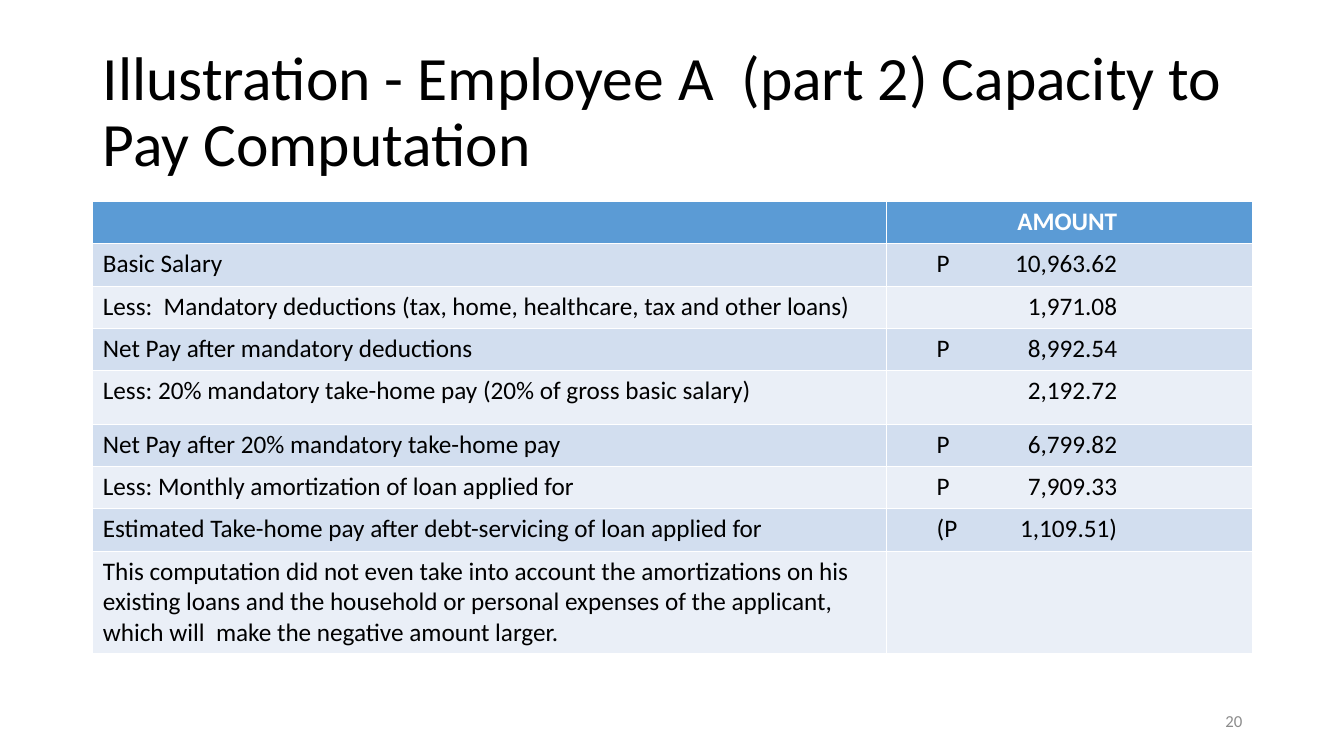
"""Build the slide on the capacity to pay of Employee A."""
from lxml.etree import SubElement
from pptx import Presentation
from pptx.dml.color import RGBColor as Color
from pptx.enum.text import MSO_ANCHOR as Anchor, PP_ALIGN as Align
from pptx.oxml.ns import qn
from pptx.util import Inches, Pt

TITLE = "Illustration - Employee A  (part 2) Capacity to Pay Computation"
NUMBER = "20"
ROWS = [
    ("", "", "AMOUNT"),
    ("Basic Salary", "P", "10,963.62"),
    ("Less:  Mandatory deductions (tax, home, healthcare, tax and other loans)", "", "1,971.08"),
    ("Net Pay after mandatory deductions", "P", "8,992.54"),
    ("Less: 20% mandatory take-home pay (20% of gross basic salary)", "", "2,192.72"),
    ("Net Pay after 20% mandatory take-home pay", "P", "6,799.82"),
    ("Less: Monthly amortization of loan applied for", "P", "7,909.33"),
    ("Estimated Take-home pay after debt-servicing of loan applied for", "(P", "1,109.51)"),
    ("This computation did not even take into account the amortizations on his "
     "existing loans and the household or personal expenses of the applicant, "
     "which will  make the negative amount larger.", "", ""),
]
WIDTHS = (7.87, 3.63)
HEIGHT = 0.42
TALL = {4: 0.53, 8: 1.02}
TABS = ((0.4, "l"), (2.19, "r"))

THEME = {
    "font": "Calibri",
    "title": 44, "body": 18, "foot": 12,
    "ink": "000000", "light": "FFFFFF", "gray": "8C8C8C",
    "head": "5B9BD5", "bands": ("EAEFF7", "D2DEEF"),
}


def write(frame, text, size="body", ink="ink", bold=False, align=Align.LEFT,
          space=None, tabs=()):
    para = frame.paragraphs[0]
    para.alignment = align
    if space:
        para.line_spacing = space
    if tabs:
        stops = SubElement(para._p.get_or_add_pPr(), qn("a:tabLst"))
        for pos, side in tabs:
            SubElement(stops, qn("a:tab"), pos=str(Inches(pos)), algn=side)
    run = para.add_run()
    run.text = text
    font = run.font
    font.name, font.size, font.bold = THEME["font"], Pt(THEME[size]), bold
    font.color.rgb = Color.from_string(THEME[ink])


def add_box(slide, box, text, **style):
    frame = slide.shapes.add_textbox(*map(Inches, box)).text_frame
    frame.word_wrap = True
    frame.vertical_anchor = Anchor.MIDDLE
    write(frame, text, **style)


def add_grid(slide):
    heights = [TALL.get(i, HEIGHT) for i in range(len(ROWS))]
    box = (0.92, 2, sum(WIDTHS), sum(heights))
    table = slide.shapes.add_table(len(ROWS), len(WIDTHS), *map(Inches, box)).table
    for col, width in zip(table.columns, WIDTHS):
        col.width = Inches(width)
    for i, (label, sign, amount) in enumerate(ROWS):
        table.rows[i].height = Inches(heights[i])
        head = i == 0
        shade = THEME["head"] if head else THEME["bands"][i % 2]
        value = f"\t{sign}\t{amount}" if amount else ""
        for j, (text, tabs) in enumerate(((label, ()), (value, TABS))):
            cell = table.cell(i, j)
            cell.fill.solid()
            cell.fill.fore_color.rgb = Color.from_string(shade)
            write(cell.text_frame, text, ink="light" if head else "ink",
                  bold=head, tabs=tabs)


def main():
    deck = Presentation()
    deck.slide_width, deck.slide_height = Inches(13.33), Inches(7.5)
    slide = deck.slides.add_slide(deck.slide_layouts[6])
    add_box(slide, (0.92, 0.4, 11.5, 1.45), TITLE, size="title", space=0.9)
    add_grid(slide)
    add_box(slide, (9.42, 6.95, 3, 0.4), NUMBER, size="foot", ink="gray",
            align=Align.RIGHT)
    deck.save("out.pptx")


if __name__ == "__main__":
    main()
